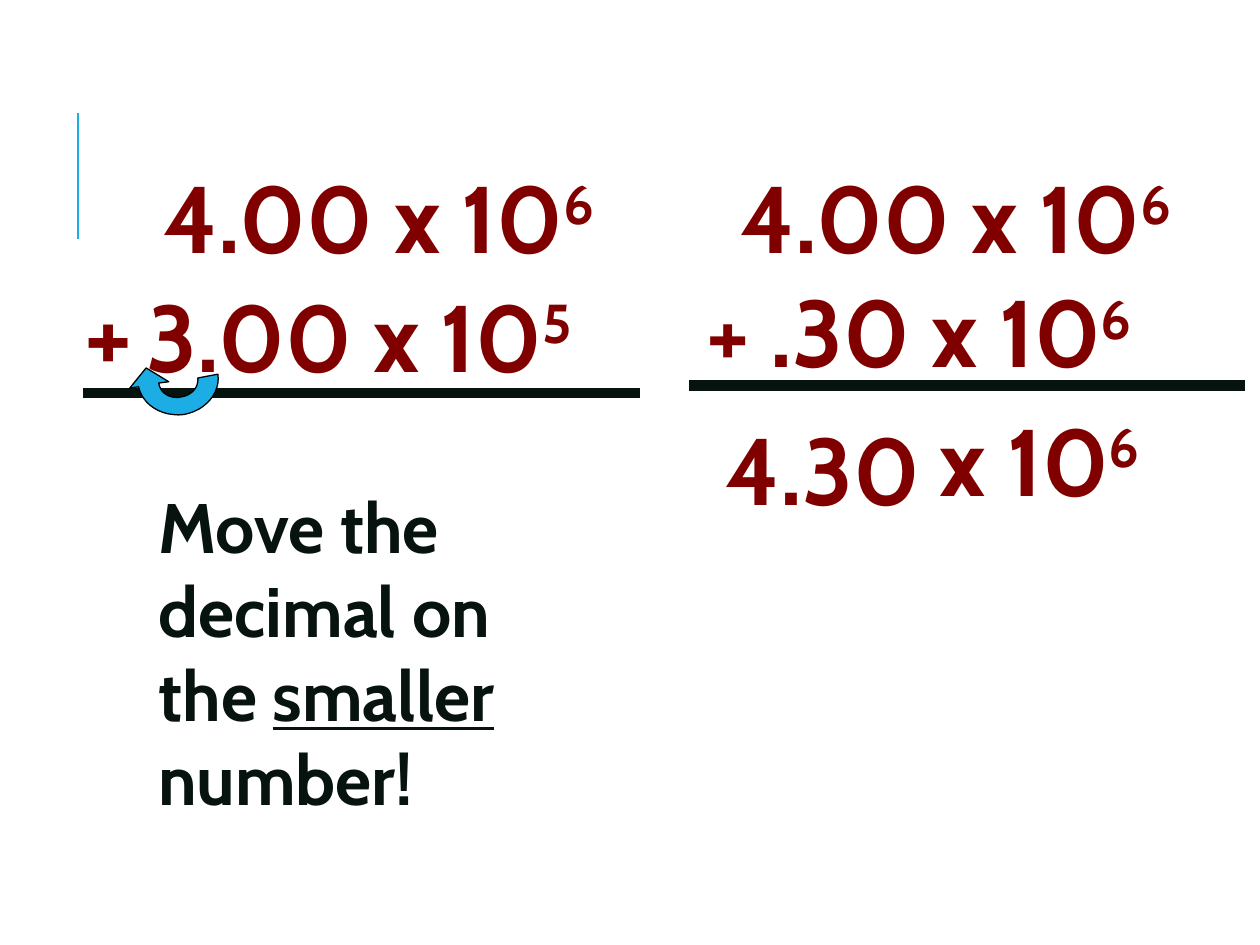
from typing import NamedTuple

import pptx
import pptx.dml.color
import pptx.enum.shapes
import pptx.enum.text
import pptx.oxml.ns
import pptx.util
from lxml import etree
from pptx.util import Inches

COLORS = {"accent": "1CADE4", "number": "800000", "ink": "07130F",
          "outline": "000000", "background": "FFFFFF"}
FONT = "Cabin"
CURVE_STEPS = 12
UNITS_PER_INCH = 1000  # freeform points are whole numbers


class Run(NamedTuple):
    text: str
    size: int = 54
    superscript: bool = False
    underline: bool = False


class Label(NamedTuple):
    left: float
    top: float
    width: float
    height: float
    runs: list[Run]
    color: str = "number"


class Rule(NamedTuple):
    left: float
    top: float
    right: float
    bottom: float
    color: str
    weight: float


def power(text: str, exponent: str) -> list[Run]:
    return [Run(text), Run(exponent, superscript=True)]


ACCENT_RULE = Rule(0.62, 0.9, 0.62, 1.9, "accent", 1.5)
SUM_RULES = [Rule(0.66, 3.12, 5.08, 3.12, "ink", 6),
             Rule(5.47, 3.06, 9.88, 3.06, "ink", 6)]
LABELS = [
    Label(1.2, 1.21, 4.22, 1, power("4.00 x 10", "6")),
    Label(0.57, 2.07, 4.17, 1.11,
          [Run("+", 60), Run(" ", 36), *power("3.00 x 10", "5")]),
    Label(5.78, 1.21, 4.22, 1, power("4.00 x 10", "6")),
    Label(5.45, 2.12, 4.15, 1.01,
          [Run(" ", 18), *power("+ .30 x 10", "6")]),
    Label(5.66, 3.21, 1.9, 1, [Run("4.30")]),
    Label(7.36, 3.14, 2.19, 1, power("x 10", "6")),
    Label(1.16, 3.79, 3.58, 2.77,
          [Run("Move the decimal on the ", 40),
           Run("smaller", 40, underline=True), Run(" number!", 40)], "ink"),
]

# Each segment holds one point (straight) or three points (cubic curve).
ARROW_START = (1.26, 3.04)
ARROW_SEGMENTS = [
    [(1.27, 3.12), (1.35, 3.17), (1.44, 3.15)],
    [(1.52, 3.14), (1.58, 3.07), (1.57, 3.0)],
    [(1.73, 2.97)],
    [(1.75, 3.12), (1.63, 3.26), (1.46, 3.29)],
    [(1.28, 3.31), (1.13, 3.21), (1.1, 3.07)],
    [(1.03, 3.08)],
    [(1.16, 2.92)],
    [(1.34, 3.03)],
]


def rgb(name: str) -> pptx.dml.color.RGBColor:
    return pptx.dml.color.RGBColor.from_string(COLORS[name])


def add_rule(slide, rule: Rule) -> None:
    line = slide.shapes.add_connector(
        pptx.enum.shapes.MSO_CONNECTOR.STRAIGHT,
        *map(Inches, (rule.left, rule.top, rule.right, rule.bottom)))
    line.line.color.rgb = rgb(rule.color)
    line.line.width = pptx.util.Pt(rule.weight)
    etree.SubElement(line._element.spPr, pptx.oxml.ns.qn("a:effectLst"))


def add_label(slide, label: Label) -> None:
    box = slide.shapes.add_textbox(
        *map(Inches, (label.left, label.top, label.width, label.height)))
    box.text_frame.word_wrap = True
    paragraph = box.text_frame.paragraphs[0]
    paragraph.alignment = pptx.enum.text.PP_ALIGN.LEFT
    for part in label.runs:
        run = paragraph.add_run()
        run.text = part.text
        formats = {"name": FONT, "size": pptx.util.Pt(part.size),
                   "bold": True, "underline": part.underline}
        for attribute, value in formats.items():
            setattr(run.font, attribute, value)
        run.font.color.rgb = rgb(label.color)
        if part.superscript:
            run._r.get_or_add_rPr().set("baseline", "30000")


def curve_points(start, first, second, end) -> list[tuple[float, float]]:
    """Sample a cubic Bézier curve, leaving out its start."""
    points = []
    for step in range(1, CURVE_STEPS + 1):
        t = step / CURVE_STEPS
        weights = ((1 - t) ** 3, 3 * t * (1 - t) ** 2,
                   3 * t ** 2 * (1 - t), t ** 3)
        points.append(tuple(
            sum(weight * value for weight, value in zip(weights, axis))
            for axis in zip(start, first, second, end)))
    return points


def add_decimal_arrow(slide) -> None:
    outline = [ARROW_START]
    for segment in ARROW_SEGMENTS:
        outline += (curve_points(outline[-1], *segment)
                    if len(segment) == 3 else segment)
    units = [(round(x * UNITS_PER_INCH), round(y * UNITS_PER_INCH))
             for x, y in outline]
    builder = slide.shapes.build_freeform(
        *units[0], scale=Inches(1) / UNITS_PER_INCH)
    builder.add_line_segments(units[1:], close=True)
    arrow = builder.convert_to_shape()
    arrow.shadow.inherit = False
    arrow.fill.solid()
    arrow.fill.fore_color.rgb = rgb("accent")
    arrow.line.color.rgb = rgb("outline")
    arrow.line.width = pptx.util.Pt(0.75)


def main() -> None:
    presentation = pptx.Presentation()
    presentation.slide_width = Inches(10)
    presentation.slide_height = Inches(7.5)
    slide = presentation.slides.add_slide(presentation.slide_layouts[6])
    slide.background.fill.solid()
    slide.background.fill.fore_color.rgb = rgb("background")

    for rule in [ACCENT_RULE, *SUM_RULES]:
        add_rule(slide, rule)
    for label in LABELS:
        add_label(slide, label)
    add_decimal_arrow(slide)
    presentation.save("out.pptx")


if __name__ == "__main__":
    main()
